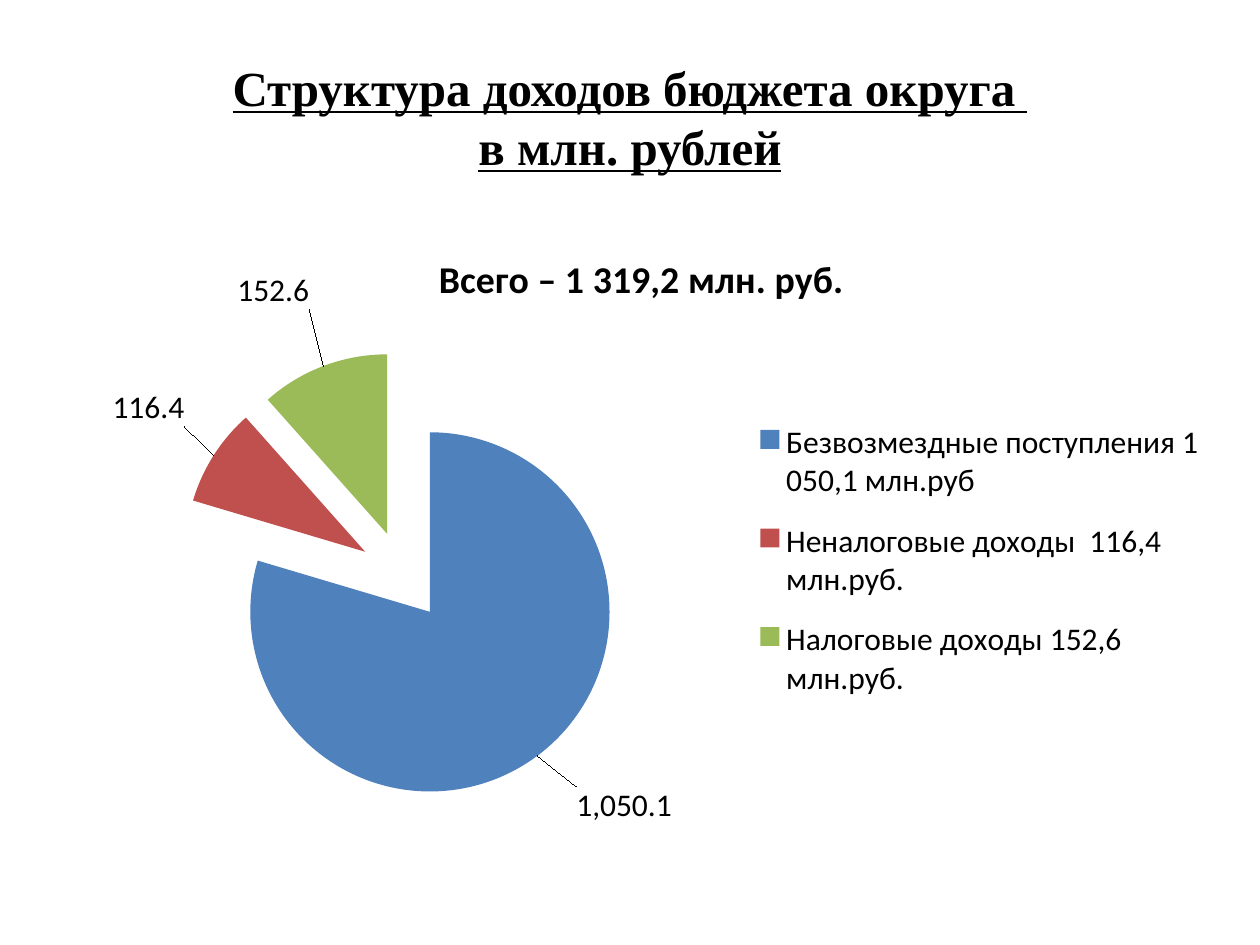
import dataclasses

import lxml.etree
import pptx
import pptx.chart.data
import pptx.enum.chart
import pptx.enum.text
import pptx.oxml.ns
import pptx.util

Pt = pptx.util.Pt
COLOURS = {"text": "000000", "grants": "4F81BD", "non_tax": "C0504D", "tax": "9BBB59"}
NUMBER_FORMAT = "#,##0.0"
EXPLOSION_PERCENT = 25


@dataclasses.dataclass
class Income:
    label: str
    value: float
    colour: str
    label_shift: tuple[float, float]


INCOMES = [
    Income("Безвозмездные поступления 1 050,1 млн.руб", 1050.1, "grants", (0.03, 0.04)),
    Income("Неналоговые доходы  116,4 млн.руб.", 116.4, "non_tax", (-0.02, -0.04)),
    Income("Налоговые доходы 152,6 млн.руб.", 152.6, "tax", (-0.01, -0.08)),
]


def colour_of(name: str) -> pptx.dml.color.RGBColor:
    return pptx.dml.color.RGBColor.from_string(COLOURS[name])


def format_font(font, **values) -> None:
    for attribute, value in values.items():
        setattr(font, attribute, value)
    font.color.rgb = colour_of("text")


def make_layout(**values) -> lxml.etree._Element:
    """Return a manual chart layout, in fractions of the chart's size."""
    qn = pptx.oxml.ns.qn
    layout = lxml.etree.Element(qn("c:layout"))
    manual = lxml.etree.SubElement(layout, qn("c:manualLayout"))
    for tag, value in values.items():
        lxml.etree.SubElement(manual, qn(f"c:{tag}"), val=str(value))
    return layout


def replace_layout(parent, layout, position: int) -> None:
    for old in parent.findall(pptx.oxml.ns.qn("c:layout")):
        parent.remove(old)
    parent.insert(position, layout)


def add_heading(slide) -> None:
    box = slide.shapes.add_textbox(Pt(36), Pt(21.6), Pt(648), Pt(90))
    frame = box.text_frame
    frame.word_wrap = True
    frame.vertical_anchor = pptx.enum.text.MSO_ANCHOR.MIDDLE
    frame.text = "Структура доходов бюджета округа \vв млн. рублей"
    paragraph = frame.paragraphs[0]
    paragraph.alignment = pptx.enum.text.PP_ALIGN.CENTER
    for run in paragraph.runs:
        format_font(run.font, name="Times New Roman", size=Pt(28), bold=True, underline=True)


def format_title(chart) -> None:
    chart.has_title = True
    frame = chart.chart_title.text_frame
    frame.text = "Всего – 1 319,2 млн. руб."
    format_font(frame.paragraphs[0].runs[0].font, name="Calibri", size=Pt(21.6), bold=True)
    layout = make_layout(xMode="edge", yMode="edge", x=0.32, y=0.04)
    replace_layout(chart.chart_title._element, layout, 1)
    chart.chart_title.include_in_layout = False


def format_legend(chart) -> None:
    chart.has_legend = True
    legend = chart.legend
    legend.position = pptx.enum.chart.XL_LEGEND_POSITION.RIGHT
    legend.include_in_layout = False
    format_font(legend.font, name="Calibri", size=Pt(18))
    layout = make_layout(xMode="edge", yMode="edge", x=0.6, y=0.29, w=0.39, h=0.51)
    replace_layout(legend._element, layout, 1)


def format_slices(series) -> None:
    """Colour and pull out the slices, and move their labels away from them."""
    qn = pptx.oxml.ns.qn
    labels = series.data_labels
    labels.show_value = True
    labels.number_format = NUMBER_FORMAT
    labels.number_format_is_linked = False
    labels.position = pptx.enum.chart.XL_LABEL_POSITION.OUTSIDE_END
    format_font(labels.font, name="Calibri", size=Pt(18))
    for index, income in enumerate(INCOMES):
        point = series.points[index]
        point.format.fill.solid()
        point.format.fill.fore_color.rgb = colour_of(income.colour)
        point.data_label.position = pptx.enum.chart.XL_LABEL_POSITION.OUTSIDE_END
    for label, income in zip(series._element.iter(qn("c:dLbl")), INCOMES):
        shift_x, shift_y = income.label_shift
        replace_layout(label, make_layout(x=shift_x, y=shift_y), 1)
    explosion = lxml.etree.Element(qn("c:explosion"), val=str(EXPLOSION_PERCENT))
    series._element.find(qn("c:dPt")).addprevious(explosion)
    label_list = series._element.find(qn("c:dLbls"))
    if label_list.find(qn("c:showLeaderLines")) is None:
        lxml.etree.SubElement(label_list, qn("c:showLeaderLines"))
    label_list.find(qn("c:showLeaderLines")).set("val", "1")


def add_income_chart(slide) -> None:
    data = pptx.chart.data.CategoryChartData(number_format=NUMBER_FORMAT)
    data.categories = [income.label for income in INCOMES]
    data.add_series("Series 1", [income.value for income in INCOMES])
    chart = slide.shapes.add_chart(
        pptx.enum.chart.XL_CHART_TYPE.PIE, Pt(36), Pt(126), Pt(658.8), Pt(356.4), data
    ).chart
    format_font(chart.font, name="Calibri", size=Pt(18))
    format_title(chart)
    format_legend(chart)
    plot = chart.plots[0]
    plot.vary_by_categories = True
    format_slices(plot.series[0])
    plot_area = chart._chartSpace.find(".//" + pptx.oxml.ns.qn("c:plotArea"))
    layout = make_layout(
        layoutTarget="inner", xMode="edge", yMode="edge", x=0.1, y=0.21, w=0.39, h=0.72
    )
    replace_layout(plot_area, layout, 0)


def main() -> None:
    presentation = pptx.Presentation()
    presentation.slide_width, presentation.slide_height = Pt(720), Pt(540)
    slide = presentation.slides.add_slide(presentation.slide_layouts[6])
    add_heading(slide)
    add_income_chart(slide)
    presentation.save("out.pptx")


if __name__ == "__main__":
    main()
